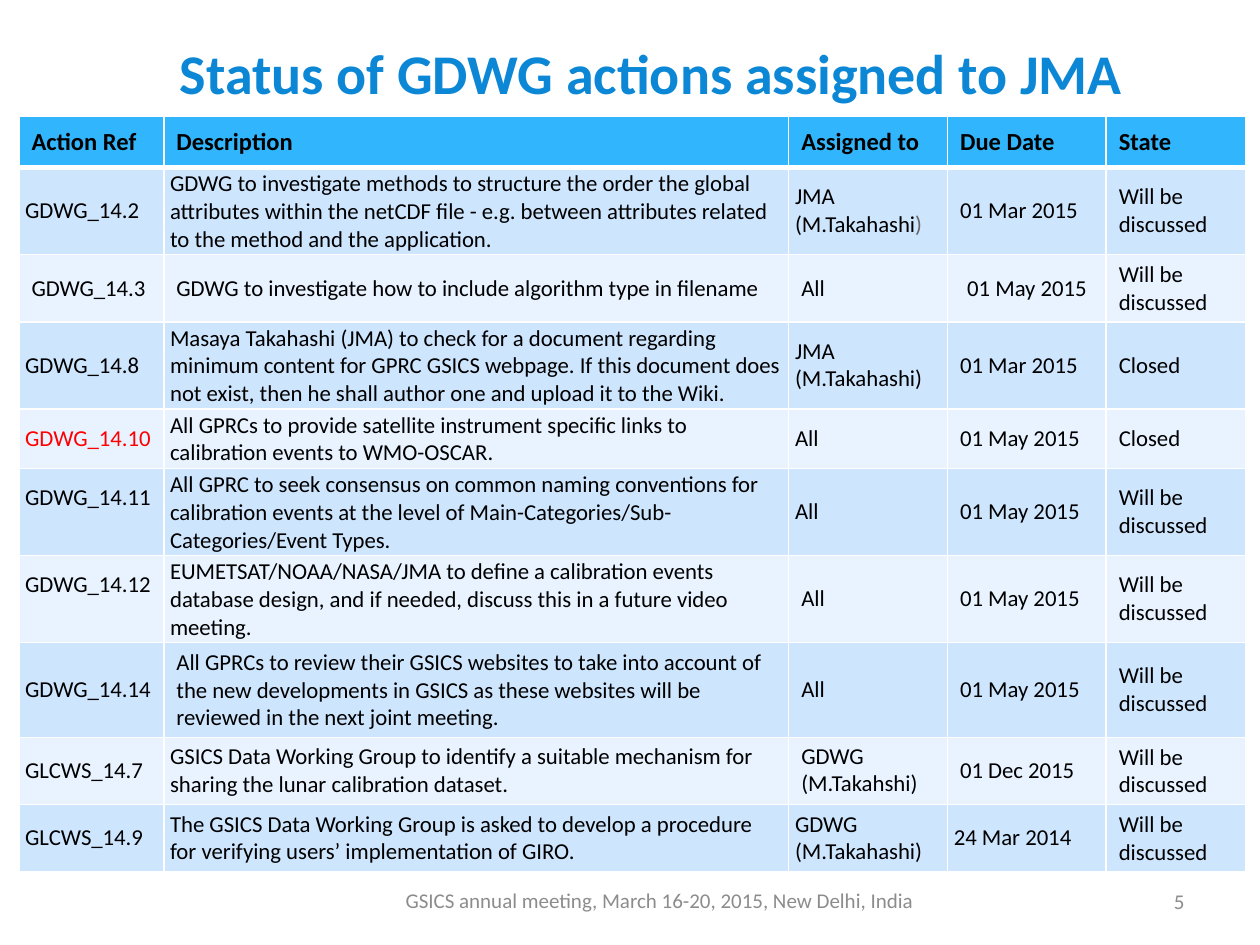
from dataclasses import dataclass

from lxml import etree
from pptx import Presentation
from pptx.dml.color import RGBColor
from pptx.enum.text import MSO_ANCHOR, PP_ALIGN
from pptx.oxml.ns import qn
from pptx.util import Inches, Pt

MID = MSO_ANCHOR.MIDDLE
LEFT, CENTER, RIGHT = PP_ALIGN.LEFT, PP_ALIGN.CENTER, PP_ALIGN.RIGHT


@dataclass(frozen=True)
class Theme:
    font: str = "Calibri"
    title: str = "0B87D6"
    text: str = "000000"
    alert: str = "FF0000"
    muted: str = "666666"
    foot: str = "8C8C8C"
    head: str = "31B6FD"
    bands: tuple = ("CEE5FE", "E8F3FF")
    line: str = "FFFFFF"
    title_size: int = 32
    head_size: int = 14
    body_size: int = 13
    foot_size: int = 12


THEME = Theme()
WIDTHS = (1.15, 4.96, 1.26, 1.26, 1.11)
ROW_HEIGHT = 0.41
GRID_HEIGHT = 6
HEADS = ("Action Ref", "Description", "Assigned to", "Due Date", "State")
OPEN = "Will be discussed"
OWNER = "JMA\n(M.Takahashi)"
MAY = "01 May 2015"
ACTIONS = (
    ("GDWG_14.2", "GDWG to investigate methods to structure the order the global "
     "attributes within the netCDF file - e.g. between attributes related to the "
     "method and the application.", "JMA\n(M.Takahashi", "01 Mar 2015", OPEN),
    ("GDWG_14.3", "GDWG to investigate how to include algorithm type in filename",
     "All", MAY, OPEN),
    ("GDWG_14.8", "Masaya Takahashi (JMA) to check for a document regarding minimum "
     "content for GPRC GSICS webpage. If this document does not exist, then he shall "
     "author one and upload it to the Wiki.", OWNER, "01 Mar 2015", "Closed"),
    ("GDWG_14.10", "All GPRCs to provide satellite instrument specific links to "
     "calibration events to WMO-OSCAR.", "All", MAY, "Closed"),
    ("GDWG_14.11", "All GPRC to seek consensus on common naming conventions for "
     "calibration events at the level of Main-Categories/Sub-Categories/Event Types.",
     "All", MAY, OPEN),
    ("GDWG_14.12", "EUMETSAT/NOAA/NASA/JMA to define a calibration events database "
     "design, and if needed, discuss this in a future video meeting.",
     "All", MAY, OPEN),
    ("GDWG_14.14", "All GPRCs to review their GSICS websites to take into account of "
     "the new developments in GSICS as these websites will be reviewed in the next "
     "joint meeting.", "All", MAY, OPEN),
    ("GLCWS_14.7", "GSICS Data Working Group to identify a suitable mechanism for "
     "sharing the lunar calibration dataset.", "GDWG\n(M.Takahshi)",
     "01 Dec 2015", OPEN),
    ("GLCWS_14.9", "The GSICS Data Working Group is asked to develop a procedure for "
     "verifying users’ implementation of GIRO.", "GDWG\n(M.Takahashi)",
     "24 Mar 2014", OPEN),
)
TIGHT = ((0, 1, 2), (3,), (0, 1, 2), (0, 1, 2), (0, 1, 2), (0, 1), (0,), (0, 1),
         (0, 1, 2, 3))
FIXED_ROWS = (3, 4, 5, 6, 8)
RAISED_ROWS = (5, 6)


def paint(run, size, color, bold=False):
    font = run.font
    font.name = THEME.font
    font.size = Pt(size)
    font.bold = bold
    font.color.rgb = RGBColor.from_string(color)


def write(frame, text, size, color, bold=False, align=LEFT):
    frame.text = text
    frame.word_wrap = True
    for para in frame.paragraphs:
        para.alignment = align
        for run in para.runs:
            paint(run, size, color, bold)


def add_title(slide, text):
    title = slide.shapes.title
    title.left, title.top = Inches(0.67), Inches(0.15)
    title.width, title.height = Inches(9), Inches(0.84)
    title.text_frame.vertical_anchor = MID
    write(title.text_frame, text, THEME.title_size, THEME.title, True, CENTER)


def add_note(slide, box, text, align):
    frame = slide.shapes.add_textbox(*map(Inches, box)).text_frame
    frame.vertical_anchor = MID
    write(frame, text, THEME.foot_size, THEME.foot, align=align)


def add_edge(cell, side, width):
    props = cell._tc.get_or_add_tcPr()
    line = etree.SubElement(props, qn("a:ln" + side), w=str(Pt(width)))
    fill = etree.SubElement(line, qn("a:solidFill"))
    etree.SubElement(fill, qn("a:srgbClr"), val=THEME.line)


def fill_cell(cell, row, col, text):
    head = row == 0
    for side in "LRTB":
        thick = (row, side) in ((0, "B"), (1, "T"))
        add_edge(cell, side, 3 if thick else 1)
    cell.fill.solid()
    back = THEME.head if head else THEME.bands[(row - 1) % 2]
    cell.fill.fore_color.rgb = RGBColor.from_string(back)
    cell.vertical_anchor = MID
    if not head and col in TIGHT[row - 1]:
        cell.margin_left = cell.margin_right = Inches(0.05)
        cell.margin_top = cell.margin_bottom = Inches(0.02)
    if col == 0 and row in RAISED_ROWS:
        cell.margin_bottom = Inches(0.24)
    size = THEME.head_size if head else THEME.body_size
    color = THEME.alert if text == "GDWG_14.10" else THEME.text
    align = CENTER if (row, col) == (2, 3) else LEFT
    write(cell.text_frame, text, size, color, head, align)
    if col == 2 and row in FIXED_ROWS:
        for para in cell.text_frame.paragraphs:
            para.line_spacing = Pt(15.3)


def add_grid(slide):
    rows = (HEADS,) + ACTIONS
    box = map(Inches, (0.15, 0.92, sum(WIDTHS), GRID_HEIGHT))
    grid = slide.shapes.add_table(len(rows), len(HEADS), *box)
    table = grid.table
    for col, width in zip(table.columns, WIDTHS):
        col.width = Inches(width)
    for num, row in enumerate(rows):
        table.rows[num].height = Inches(ROW_HEIGHT)
        for col, text in enumerate(row):
            fill_cell(table.cell(num, col), num, col, text)
    grid.height = Inches(GRID_HEIGHT)
    run = table.cell(1, 2).text_frame.paragraphs[-1].add_run()
    run.text = ")"
    paint(run, THEME.body_size, THEME.muted)


def main():
    deck = Presentation()
    deck.slide_width, deck.slide_height = Inches(10), Inches(7.5)
    slide = deck.slides.add_slide(deck.slide_layouts[5])
    add_note(slide, (7.17, 6.95, 2.33, 0.4), "5", RIGHT)
    add_title(slide, "Status of GDWG actions assigned to JMA")
    add_grid(slide)
    add_note(slide, (2.56, 6.92, 5.35, 0.45),
             "GSICS annual meeting, March 16-20, 2015, New Delhi, India", CENTER)
    deck.save("out.pptx")


if __name__ == "__main__":
    main()
